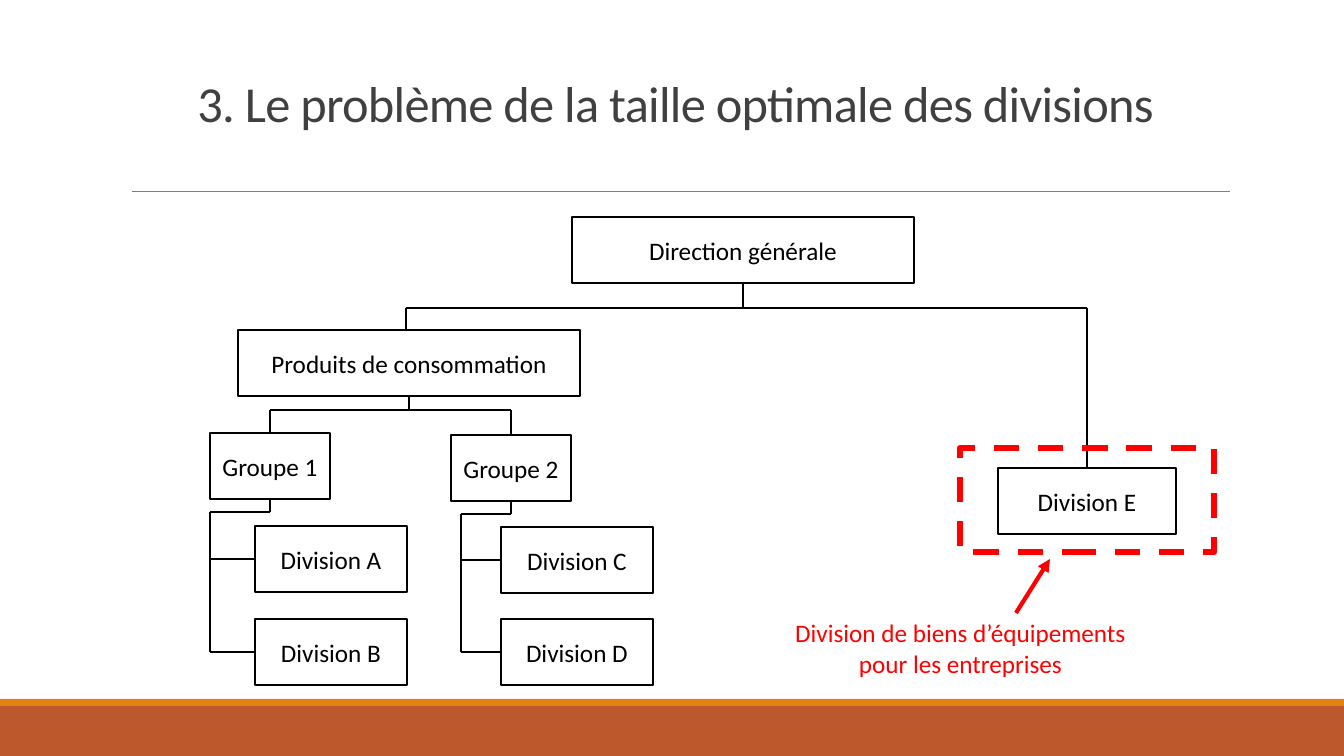
from lxml.etree import SubElement
from pptx import Presentation
from pptx.dml.color import RGBColor
from pptx.enum.dml import MSO_LINE_DASH_STYLE as Dash
from pptx.enum.shapes import MSO_CONNECTOR as Wire, MSO_SHAPE as Preset
from pptx.enum.text import MSO_ANCHOR as Anchor, PP_ALIGN as Align
from pptx.oxml.ns import qn
from pptx.util import Pt

PX = 914400 / 100.8
COLORS = {"rust": "BD582C", "orange": "E48312", "grey": "808080",
          "title": "404040", "black": "000000", "red": "FF0000"}
TOP, LEFT, BOTTOM = 0, 1, 2

deck = Presentation()
deck.slide_width, deck.slide_height = round(1344 * PX), round(756 * PX)
page = deck.slides.add_slide(deck.slide_layouts[6])


def add_box(place, text="", size=18, color="black", fill=None, line=None, width=1.25, anchor=Anchor.MIDDLE):
    box = page.shapes.add_shape(Preset.RECTANGLE, *[round(n * PX) for n in place])
    box.shadow.inherit = False
    if fill:
        box.fill.solid()
        box.fill.fore_color.rgb = RGBColor.from_string(COLORS[fill])
    else:
        box.fill.background()
    if line:
        box.line.color.rgb = RGBColor.from_string(COLORS[line])
        box.line.width = Pt(width)
    else:
        box.line.fill.background()
    if text:
        frame = box.text_frame
        for name, value in {"word_wrap": True, "vertical_anchor": anchor}.items():
            setattr(frame, name, value)
        para = frame.paragraphs[0]
        para.alignment = Align.CENTER
        span = para.add_run()
        span.text = text
        for name, value in {"name": "Calibri", "size": Pt(size)}.items():
            setattr(span.font, name, value)
        span.font.color.rgb = RGBColor.from_string(COLORS[color])
    return box


def add_line(ends, start=None, stop=None, color="black", width=1):
    line = page.shapes.add_connector(Wire.STRAIGHT, *[round(n * PX) for n in ends])
    if start:
        line.begin_connect(*start)
    if stop:
        line.end_connect(*stop)
    line.line.color.rgb = RGBColor.from_string(COLORS[color])
    line.line.width = Pt(width)
    SubElement(line.element.spPr, qn("a:effectLst"))
    return line


add_box((0, 706, 1344, 50), fill="rust")
add_box((0, 699, 1344, 7), fill="orange")
add_line((132, 191, 1230, 191), color="grey", width=0.5)

title = add_box((121, 59, 1109, 79), "3. Le problème de la taille optimale des divisions",
                size=36, color="title", anchor=Anchor.BOTTOM)
title_para = title.text_frame.paragraphs[0]
title_para.line_spacing = 0.85
title_para.runs[0].font.language_id = None
title_para.runs[0].font._element.set("spc", "-50")

units = {}
for name, left, top, width in [
    ("Direction générale", 572, 217, 342),
    ("Division E", 998, 468, 178),
    ("Groupe 1", 210, 433, 120),
    ("Groupe 2", 451, 435, 120),
    ("Division A", 255, 526, 152),
    ("Division B", 255, 619, 152),
    ("Division C", 501, 527, 152),
    ("Division D", 501, 619, 152),
    ("Produits de consommation", 238, 330, 342),
]:
    units[name] = add_box((left, top, width, 66), name, line="black")

add_line((743, 283, 743, 308), start=(units["Direction générale"], BOTTOM))
add_line((743, 308, 406, 308))
add_line((406, 308, 406, 330))
add_line((743, 308, 1087, 308))
add_line((1087, 308, 1087, 468), stop=(units["Division E"], TOP))
add_line((409, 396, 409, 410), start=(units["Produits de consommation"], BOTTOM))

for group, center, top, trunk, divisions in [
    ("Groupe 1", 270, 433, 210, [("Division A", 255, 559), ("Division B", 255, 652)]),
    ("Groupe 2", 511, 435, 461, [("Division C", 501, 560), ("Division D", 501, 652)]),
]:
    bend = top + 79
    add_line((409, 410, center, 410))
    add_line((center, 410, center, top), stop=(units[group], TOP))
    add_line((center, top + 66, center, bend), start=(units[group], BOTTOM))
    add_line((center, bend, trunk, bend))
    add_line((trunk, bend, trunk, 652))
    for division, left, middle in divisions:
        add_line((trunk, middle, left, middle), stop=(units[division], LEFT))

arrow = add_line((1016, 613, 1050, 559), color="red", width=3)
SubElement(arrow.line._get_or_add_ln(), qn("a:tailEnd"), type="triangle")
add_box((776, 615, 369, 66), "Division de biens d’équipements pour les entreprises", color="red")
highlight = add_box((960, 448, 254, 104), line="red", width=4.5)
highlight.line.dash_style = Dash.DASH

deck.save("out.pptx")
